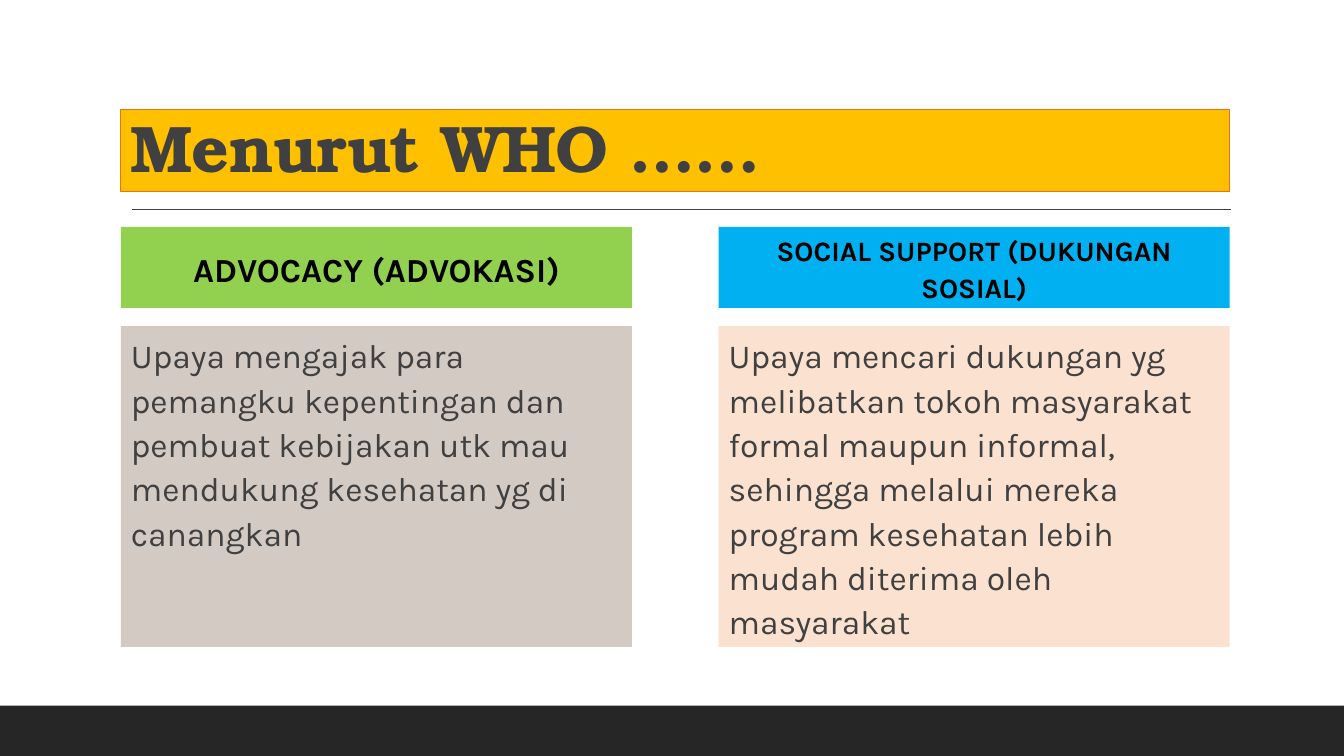
from dataclasses import dataclass
from typing import Optional

from lxml.etree import SubElement
from pptx import Presentation
from pptx.dml.color import RGBColor
from pptx.enum.shapes import MSO_CONNECTOR as Connector, MSO_SHAPE as Shape
from pptx.enum.text import MSO_ANCHOR as Anchor, PP_ALIGN as Align
from pptx.oxml.ns import qn
from pptx.slide import Slide
from pptx.util import Pt

COLORS = {
    "footer": "262626",
    "text": "404040",
    "heading": "000000",
    "title": "FFC000",
    "title_border": "EC7016",
    "advocacy": "92D050",
    "advocacy_body": "D3CAC4",
    "support": "00B0F0",
    "support_body": "FBE2D0",
}
LEFT, WIDTH = 86.4, 792
COLUMN_WIDTH = 365


@dataclass(frozen=True)
class TextStyle:
    font: str
    color: str
    bold: bool
    anchor: Anchor
    align: Align
    line_spacing: float
    space_after: float = 0
    character_spacing: float = 0


@dataclass(frozen=True)
class Panel:
    left: float
    top: float
    width: float
    height: float
    fill: str
    text: str = ""
    size: float = 24
    style: Optional[TextStyle] = None
    border: Optional[str] = None


@dataclass(frozen=True)
class Topic:
    heading: str
    heading_size: float
    body: str
    fill: str


TITLE = TextStyle("TeX Gyre Bonum", "text", True, Anchor.BOTTOM, Align.LEFT, 0.9,
                  character_spacing=-0.5)
HEADING = TextStyle("Karla", "heading", True, Anchor.MIDDLE, Align.CENTER, 1.1, 2)
BODY = TextStyle("Karla", "text", False, Anchor.TOP, Align.LEFT, 1.1, 2)

TOPICS = [
    Topic("ADVOCACY (ADVOKASI)", 24,
          "Upaya mengajak para pemangku kepentingan dan pembuat kebijakan utk mau "
          "mendukung kesehatan yg di canangkan", "advocacy"),
    Topic("SOCIAL SUPPORT (DUKUNGAN SOSIAL)", 20,
          "Upaya mencari dukungan yg melibatkan tokoh masyarakat formal maupun "
          "informal, sehingga melalui mereka program kesehatan lebih mudah diterima "
          "oleh masyarakat", "support"),
]


def color(name: str) -> RGBColor:
    return RGBColor.from_string(COLORS[name])


def apply(target: object, values: dict) -> None:
    for name, value in values.items():
        setattr(target, name, value)


def draw_panel(page: Slide, panel: Panel) -> None:
    box = page.shapes.add_shape(Shape.RECTANGLE, Pt(panel.left), Pt(panel.top),
                                Pt(panel.width), Pt(panel.height))
    box.shadow.inherit = False
    box.fill.solid()
    box.fill.fore_color.rgb = color(panel.fill)
    if panel.border:
        box.line.color.rgb = color(panel.border)
        box.line.width = Pt(0.75)
    else:
        box.line.fill.background()
    if panel.style:
        write_text(box.text_frame, panel.text, panel.size, panel.style)


def write_text(frame: object, text: str, size: float, style: TextStyle) -> None:
    apply(frame, {
        "word_wrap": True, "vertical_anchor": style.anchor,
        "margin_left": Pt(7.2), "margin_right": Pt(7.2 if style is not BODY else 0),
        "margin_top": Pt(3.6), "margin_bottom": Pt(3.6),
    })
    para = frame.paragraphs[0]
    apply(para, {"alignment": style.align, "line_spacing": style.line_spacing,
                 "space_before": Pt(0), "space_after": Pt(style.space_after)})
    span = para.add_run()
    span.text = text
    apply(span.font, {"name": style.font, "size": Pt(size), "bold": style.bold})
    span.font.color.rgb = color(style.color)
    if style.character_spacing:
        span._r.get_or_add_rPr().set("spc", str(round(style.character_spacing * 100)))


def draw_rule(page: Slide, left: float, right: float, top: float) -> None:
    rule = page.shapes.add_connector(Connector.STRAIGHT, Pt(left), Pt(top),
                                     Pt(right), Pt(top))
    rule.line.color.rgb = color("text")
    rule.line.width = Pt(1)
    SubElement(rule._element.spPr, qn("a:effectLst"))


def main() -> None:
    deck = Presentation()
    apply(deck, {"slide_width": Pt(960), "slide_height": Pt(540)})
    page = deck.slides.add_slide(deck.slide_layouts[6])

    draw_panel(page, Panel(0, 504, 960, 36, "footer"))
    draw_rule(page, 94.3, 879, 149.6)
    draw_panel(page, Panel(LEFT, 78, WIDTH, 59, "title", "Menurut WHO ……", 47,
                           TITLE, "title_border"))
    for index, topic in enumerate(TOPICS):
        left = LEFT + index * (WIDTH - COLUMN_WIDTH)
        draw_panel(page, Panel(left, 162, COLUMN_WIDTH, 58, topic.fill,
                               topic.heading, topic.heading_size, HEADING))
        draw_panel(page, Panel(left, 233, COLUMN_WIDTH, 229, f"{topic.fill}_body",
                               topic.body, style=BODY))
    deck.save("out.pptx")


if __name__ == "__main__":
    main()
